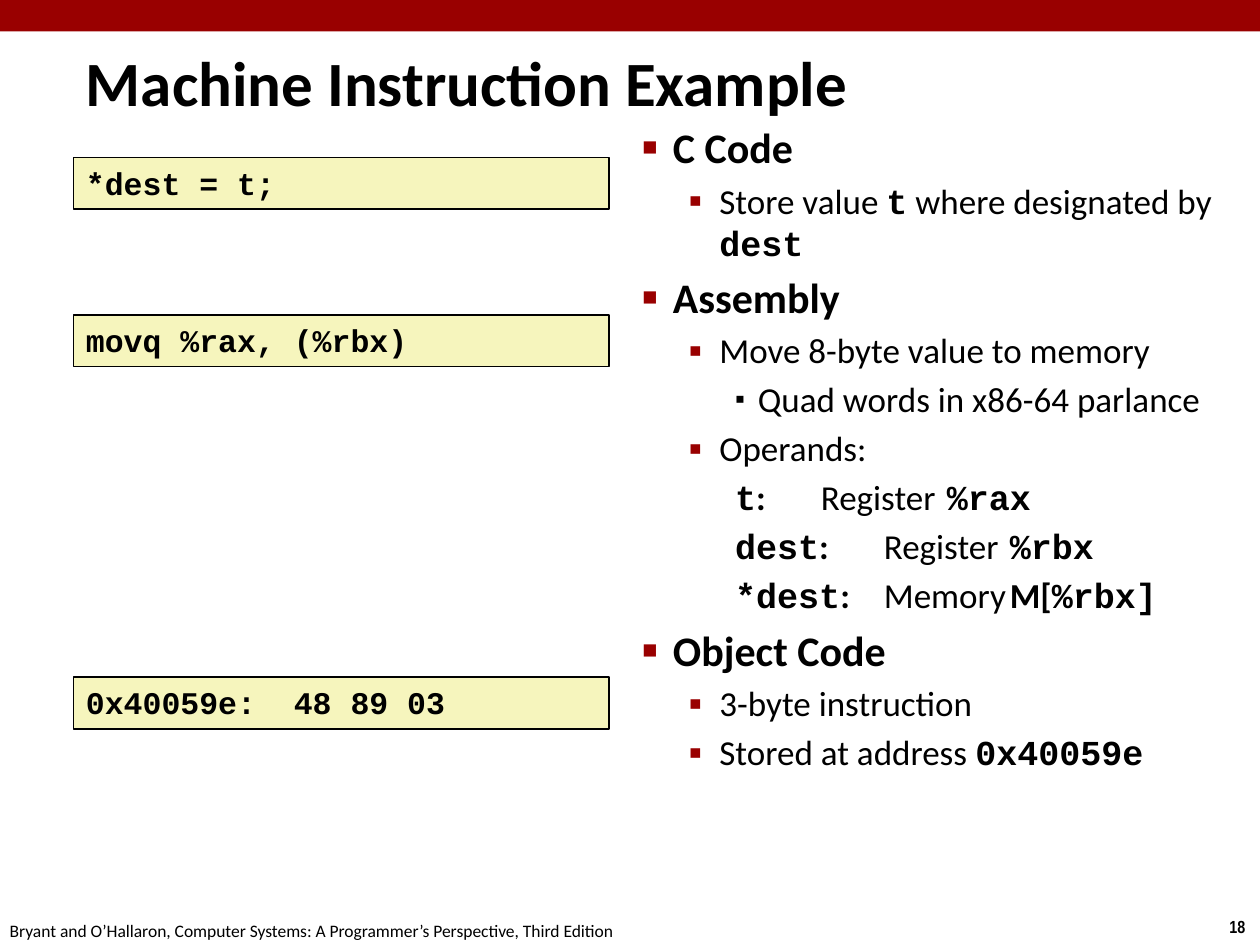
"""Build the Machine Instruction Example slide."""
from lxml.etree import SubElement
from pptx import Presentation
from pptx.dml.color import RGBColor as Color
from pptx.enum.shapes import MSO_SHAPE as Preset
from pptx.enum.text import MSO_ANCHOR as Anchor, MSO_AUTO_SIZE as AutoSize
from pptx.oxml.ns import qn
from pptx.util import Pt

COLORS = {"red": "990000", "cream": "F6F5BD", "black": "000000"}
SANS, MONO, NARROW = "Calibri", "Courier New", "Arial Narrow"


def add_run(paragraph, text, size, font=SANS, bold=False):
    run = paragraph.add_run()
    run.text = text
    run.font.size = Pt(size)
    run.font.name = font
    run.font.bold = bold
    run.font.color.rgb = Color.from_string(COLORS["black"])


def format_paragraph(paragraph, margin, hanging, bullet=None, tabs=()):
    properties = paragraph._p.get_or_add_pPr()
    properties.set("marL", str(Pt(margin)))
    properties.set("indent", str(-Pt(hanging)))
    if tabs:
        spacing = SubElement(properties, qn("a:spcBef"))
        SubElement(spacing, qn("a:spcPct"), val="20000")
    if bullet:
        character, color, percent = bullet
        fill = SubElement(properties, qn("a:buClr"))
        SubElement(fill, qn("a:srgbClr"), val=COLORS[color])
        SubElement(properties, qn("a:buSzPct"), val=str(percent * 1000))
        SubElement(properties, qn("a:buFont"), typeface="Arial")
        SubElement(properties, qn("a:buChar"), char=character)
    else:
        SubElement(properties, qn("a:buNone"))
    if tabs:
        stops = SubElement(properties, qn("a:tabLst"))
        for position in tabs:
            SubElement(stops, qn("a:tab"), pos=str(Pt(position)), algn="l")


presentation = Presentation()
presentation.slide_width, presentation.slide_height = Pt(720), Pt(540)
slide = presentation.slides.add_slide(presentation.slide_layouts[6])

banner = slide.shapes.add_shape(Preset.RECTANGLE, 0, 0, Pt(720), Pt(18))
banner.shadow.inherit = False
banner.fill.solid()
banner.fill.fore_color.rgb = Color.from_string(COLORS["red"])
banner.line.fill.background()

footers = [
    ("18", 695.5, 520, 24.5, NARROW, True),
    ("Bryant and O’Hallaron, Computer Systems: A Programmer’s Perspective, Third Edition",
     -1.5, 522, 366, SANS, False),
]
for text, left, top, width, font, bold in footers:
    footer = slide.shapes.add_textbox(Pt(left), Pt(top), Pt(width), Pt(19.4))
    footer.text_frame.word_wrap = False
    footer.text_frame.auto_size = AutoSize.SHAPE_TO_FIT_TEXT
    add_run(footer.text_frame.paragraphs[0], text, 10, font, bold)

title = slide.shapes.add_textbox(Pt(42), Pt(24), Pt(572), Pt(45))
title.text_frame.word_wrap = True
title.text_frame.vertical_anchor = Anchor.MIDDLE
format_paragraph(title.text_frame.paragraphs[0], 9, 9)
add_run(title.text_frame.paragraphs[0], "Machine Instruction Example", 36, bold=True)

STYLES = {
    "heading": (0, 24, 17.5, 17.5, ("■", "red", 60)),
    "point": (1, 20, 44, 17.5, ("▪", "red", 110)),
    "detail": (2, 20, 66, 13, ("▪", "black", 80)),
    "operand": (2, 20, 66, 13, None),
}
outline = [
    ("heading", [("C Code", SANS, True)]),
    ("point", [("Store value ", SANS, False), ("t", MONO, True),
               (" where designated by ", SANS, False), ("dest", MONO, True)]),
    ("heading", [("Assembly", SANS, True)]),
    ("point", [("Move 8-byte value to memory", SANS, False)]),
    ("detail", [("Quad words in x86-64 parlance", SANS, False)]),
    ("point", [("Operands:", SANS, False)]),
    ("operand", [("t", MONO, True), (":\t", SANS, True),
                 ("Register\t", SANS, False), ("%rax", MONO, True)]),
    ("operand", [("dest", MONO, True), (":\t", SANS, True),
                 ("Register\t", SANS, False), ("%rbx", MONO, True)]),
    ("operand", [("*dest", MONO, True), (": ", SANS, True), ("\tMemory\t", SANS, False),
                 ("M[", SANS, True), ("%rbx]", MONO, True)]),
    ("heading", [("Object Code", SANS, True)]),
    ("point", [("3-byte instruction", SANS, False)]),
    ("point", [("Stored at address ", SANS, False), ("0x40059e", MONO, True)]),
]
body = slide.shapes.add_textbox(Pt(360), Pt(66), Pt(360), Pt(456))
body.text_frame.word_wrap = True
for index, (style, runs) in enumerate(outline):
    frame = body.text_frame
    paragraph = frame.add_paragraph() if index else frame.paragraphs[0]
    level, size, margin, hanging, bullet = STYLES[style]
    paragraph.level = level
    format_paragraph(paragraph, margin, hanging, bullet, tabs=(126, 198))
    for text, font, bold in runs:
        add_run(paragraph, text, size, font, bold)

code_boxes = [
    ("*dest = t;", 90),
    ("movq %rax, (%rbx)", 180),
    ("0x40059e:  48 89 03", 387),
]
for code, top in code_boxes:
    box = slide.shapes.add_shape(Preset.RECTANGLE, Pt(42), Pt(top), Pt(306), Pt(29.5))
    box.shadow.inherit = False
    box.fill.solid()
    box.fill.fore_color.rgb = Color.from_string(COLORS["cream"])
    box.line.color.rgb = Color.from_string(COLORS["black"])
    box.line.width = Pt(1)
    box.text_frame.vertical_anchor = Anchor.TOP
    box.text_frame.auto_size = AutoSize.SHAPE_TO_FIT_TEXT
    paragraph = box.text_frame.paragraphs[0]
    paragraph._p.get_or_add_pPr().set("algn", "l")
    add_run(paragraph, code, 18, MONO, True)

presentation.save("out.pptx")
